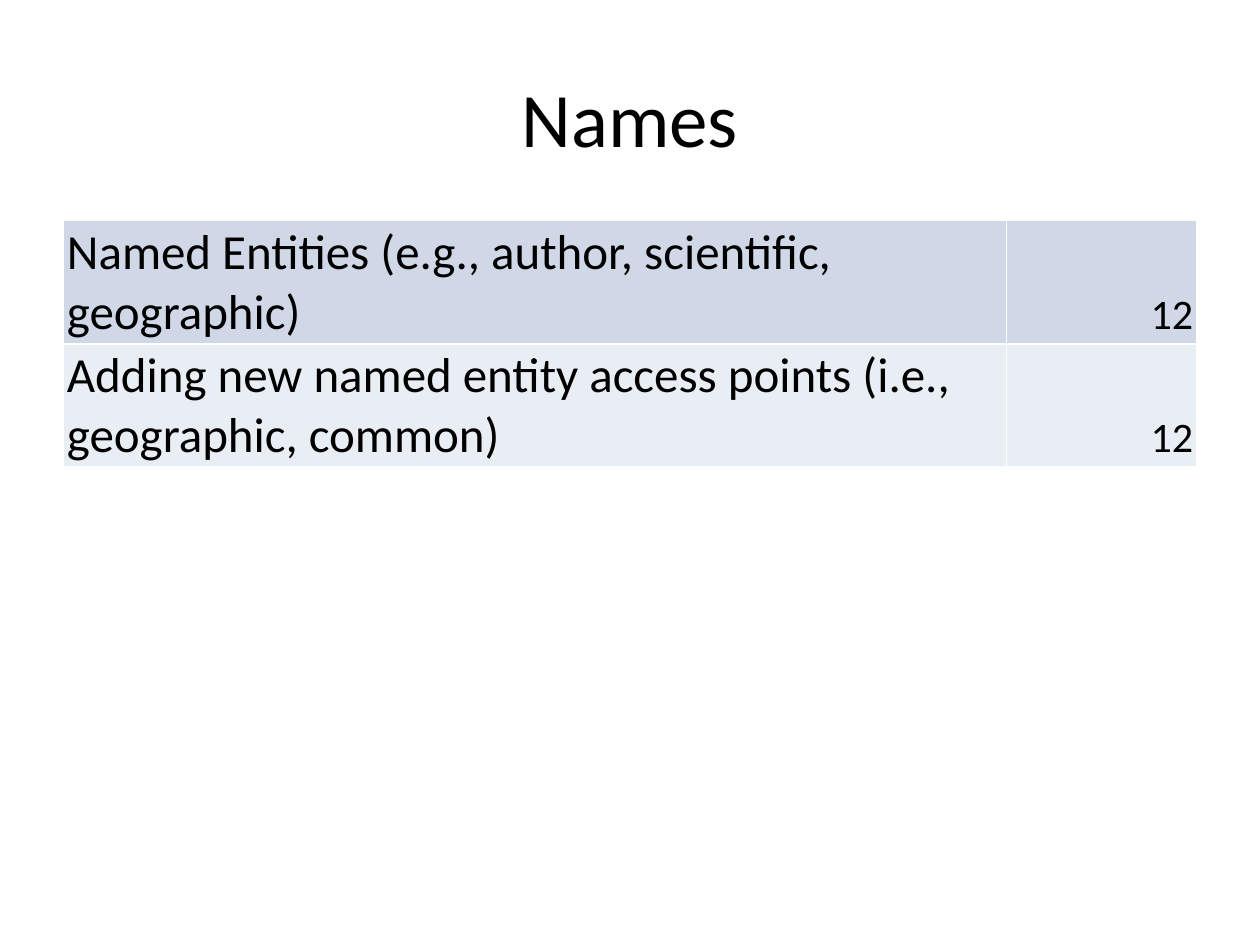
import pptx
import pptx.util
import pptx.dml.color
import pptx.enum.text
from pptx.util import Cm, Pt

TITLE = "Names"
ROWS = [
    ("Named Entities (e.g., author, scientific, geographic)", "12"),
    ("Adding new named entity access points (i.e., geographic, common)", "12"),
]

THEME = {
    "font": "Calibri",
    "text": "000000",
    "bands": ("D0D8E8", "E9EDF4"),
    "title_size": 44,
    "column_sizes": (28, 24),
}

ALIGN = pptx.enum.text.PP_ALIGN
ANCHOR = pptx.enum.text.MSO_ANCHOR
COLUMN_ALIGNS = (ALIGN.LEFT, ALIGN.RIGHT)

LEFT, WIDTH = 1.27, 22.86
TITLE_TOP, TITLE_HEIGHT = 0.76, 3.18
TABLE_TOP, ROW_HEIGHT = 4.45, 2.48
NUMBER_WIDTH = 3.84
COLUMN_WIDTHS = (WIDTH - NUMBER_WIDTH, NUMBER_WIDTH)
CELL_MARGIN_X, CELL_MARGIN_Y = 0.08, 0.05


def rgb(value):
    return pptx.dml.color.RGBColor.from_string(value)


def write(tf, text, size, align):
    p = tf.paragraphs[0]
    p.alignment = align
    r = p.add_run()
    r.text = text
    r.font.name = THEME["font"]
    r.font.size = Pt(size)
    r.font.color.rgb = rgb(THEME["text"])


def add_title(s):
    sp = s.shapes.add_textbox(Cm(LEFT), Cm(TITLE_TOP), Cm(WIDTH), Cm(TITLE_HEIGHT))
    tf = sp.text_frame
    tf.word_wrap = True
    tf.vertical_anchor = ANCHOR.MIDDLE
    write(tf, TITLE, THEME["title_size"], ALIGN.CENTER)


def add_names_table(s):
    """Add the banded table; its white rules come from the default table style."""
    table = s.shapes.add_table(
        len(ROWS), len(COLUMN_WIDTHS), Cm(LEFT), Cm(TABLE_TOP),
        Cm(WIDTH), Cm(ROW_HEIGHT * len(ROWS)),
    ).table
    table.first_row = False
    for column, width in zip(table.columns, COLUMN_WIDTHS):
        column.width = Cm(width)
    for i, values in enumerate(ROWS):
        for j, text in enumerate(values):
            cell = table.cell(i, j)
            cell.fill.solid()
            cell.fill.fore_color.rgb = rgb(THEME["bands"][i % 2])
            cell.vertical_anchor = ANCHOR.BOTTOM
            cell.margin_left = cell.margin_right = Cm(CELL_MARGIN_X)
            cell.margin_top = cell.margin_bottom = Cm(CELL_MARGIN_Y)
            write(cell.text_frame, text, THEME["column_sizes"][j], COLUMN_ALIGNS[j])


def main():
    prs = pptx.Presentation()
    prs.slide_width, prs.slide_height = Cm(25.4), Cm(19.05)
    s = prs.slides.add_slide(prs.slide_layouts[6])
    add_title(s)
    add_names_table(s)
    prs.save("out.pptx")


if __name__ == "__main__":
    main()
